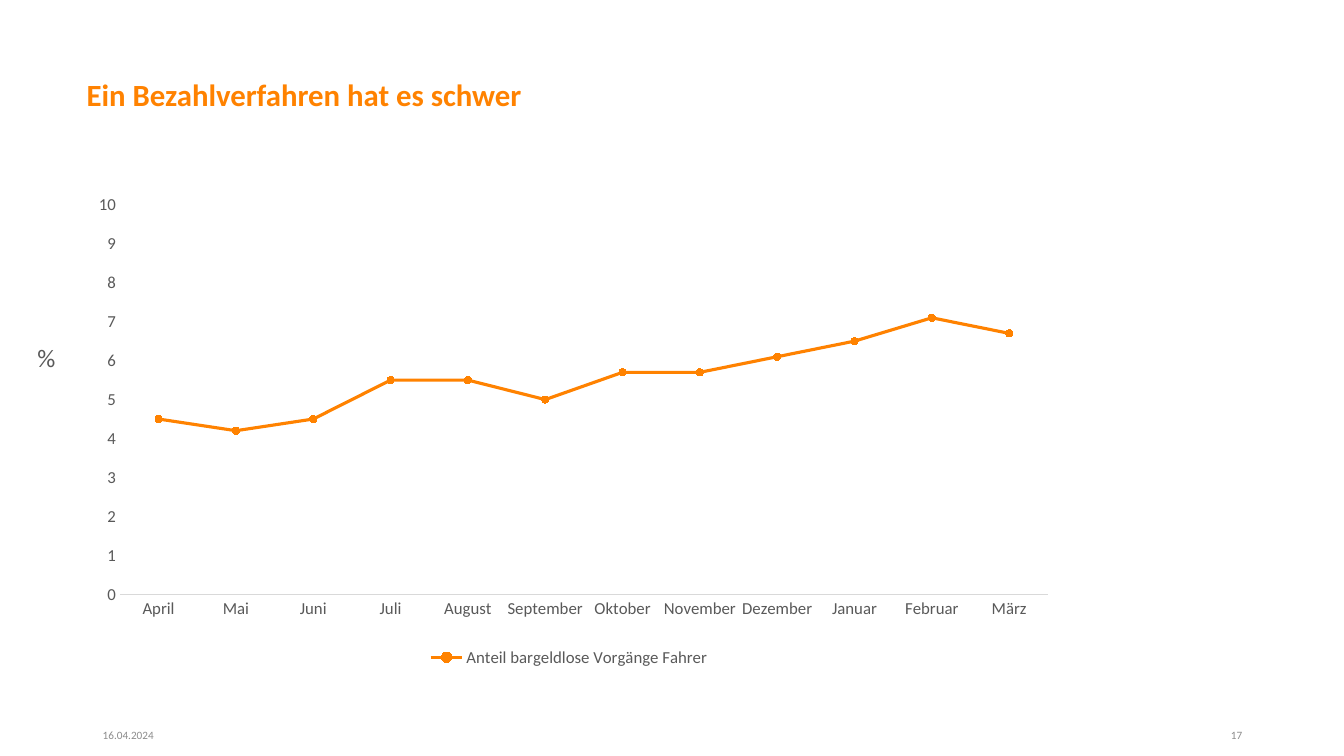
import pptx
import pptx.util
import pptx.chart.data
import pptx.dml.color
import pptx.enum.chart
import pptx.enum.text
import pptx.oxml

PX = 9144  # EMU per px, 100 px to the inch
FONT = "Calibri"
COLORS = {"orange": "FF8200", "text": "595959", "axis": "D9D9D9", "foot": "8C8C8C"}
SHARES = {
    "April": 4.5, "Mai": 4.2, "Juni": 4.5, "Juli": 5.5,
    "August": 5.5, "September": 5, "Oktober": 5.7, "November": 5.7,
    "Dezember": 6.1, "Januar": 6.5, "Februar": 7.1, "März": 6.7,
}
PLOT = {"x": 0.044, "y": 0.036, "w": 0.942, "h": 0.805}
ALIGN = pptx.enum.text.PP_ALIGN
ANCHOR = pptx.enum.text.MSO_ANCHOR


def rgb(name):
    return pptx.dml.color.RGBColor.from_string(COLORS[name])


def scale(*box):
    return [pptx.util.Emu(n * PX) for n in box]


def style(font, size, color, bold=False):
    font.name = FONT
    font.size = pptx.util.Pt(size)
    font.bold = bold
    font.color.rgb = rgb(color)


def write(shape, text, size=8, color="foot", bold=False, align=ALIGN.LEFT,
          anchor=ANCHOR.MIDDLE, inset=None, spacing=None):
    frame = shape.text_frame
    frame.word_wrap = True
    frame.vertical_anchor = anchor
    if inset is not None:
        frame.margin_left = frame.margin_right = inset
        frame.margin_top = frame.margin_bottom = inset
    para = frame.paragraphs[0]
    para.alignment = align
    para.line_spacing = spacing
    run = para.add_run()
    run.text = text
    style(run.font, size, color, bold)


def add_text(slide, box, text, **format):
    write(slide.shapes.add_textbox(*scale(*box)), text, **format)


def add_title(slide, box, text):
    title = slide.shapes.title
    title.left, title.top, title.width, title.height = scale(*box)
    write(title, text, size=22, color="orange", bold=True, spacing=0.9)


def set_plot(chart):
    area = chart._chartSpace.chart.plotArea
    for old in area.xpath("c:layout"):
        area.remove(old)
    parts = "".join(f'<c:{k} val="{v}"/>' for k, v in PLOT.items())
    area.insert(0, pptx.oxml.parse_xml(
        '<c:layout xmlns:c="http://schemas.openxmlformats.org/drawingml/2006/chart">'
        '<c:manualLayout><c:layoutTarget val="inner"/>'
        f'<c:xMode val="edge"/><c:yMode val="edge"/>{parts}'
        '</c:manualLayout></c:layout>'))


def add_chart(slide, box):
    kinds = pptx.enum.chart
    data = pptx.chart.data.CategoryChartData()
    data.categories = list(SHARES)
    data.add_series("Anteil bargeldlose Vorgänge Fahrer", list(SHARES.values()))
    chart = slide.shapes.add_chart(
        kinds.XL_CHART_TYPE.LINE_MARKERS, *scale(*box), data).chart
    chart.has_title = False
    style(chart.font, 12, "text")
    set_plot(chart)

    # Legend
    chart.has_legend = True
    chart.legend.position = kinds.XL_LEGEND_POSITION.BOTTOM
    chart.legend.include_in_layout = False
    style(chart.legend.font, 12, "text")

    # Axes
    months, share = chart.category_axis, chart.value_axis
    for axis in (months, share):
        axis.has_major_gridlines = False
        axis.major_tick_mark = kinds.XL_TICK_MARK.NONE
        axis.minor_tick_mark = kinds.XL_TICK_MARK.NONE
        style(axis.tick_labels.font, 12, "text")
    months.format.line.color.rgb = rgb("axis")
    months.format.line.width = pptx.util.Pt(0.75)
    share.format.line.fill.background()
    share.minimum_scale, share.maximum_scale, share.major_unit = 0, 10, 1
    share.tick_labels.number_format = "0"
    share.tick_labels.number_format_is_linked = False

    # Line and markers
    chart.plots[0].vary_by_categories = False
    line = chart.plots[0].series[0]
    line.smooth = False
    line.format.line.color.rgb = rgb("orange")
    line.format.line.width = pptx.util.Pt(2.25)
    line.marker.style = kinds.XL_MARKER_STYLE.CIRCLE
    line.marker.size = 5
    line.marker.format.fill.solid()
    line.marker.format.fill.fore_color.rgb = rgb("orange")
    line.marker.format.line.color.rgb = rgb("orange")


def main():
    deck = pptx.Presentation()
    deck.slide_width, deck.slide_height = scale(1333, 750)
    slide = deck.slides.add_slide(deck.slide_layouts[5])

    # Title and chart
    add_title(slide, (76, 52, 1000, 87), "Ein Bezahlverfahren hat es schwer")
    add_chart(slide, (76, 186, 977, 480))
    add_text(slide, (37, 340, 39, 71), "%", size=18, color="text",
             anchor=ANCHOR.TOP, inset=0)

    # Footer
    add_text(slide, (92, 709, 300, 40), "16.04.2024")
    add_text(slide, (942, 709, 300, 40), "17", align=ALIGN.RIGHT)

    deck.save("out.pptx")


if __name__ == "__main__":
    main()
